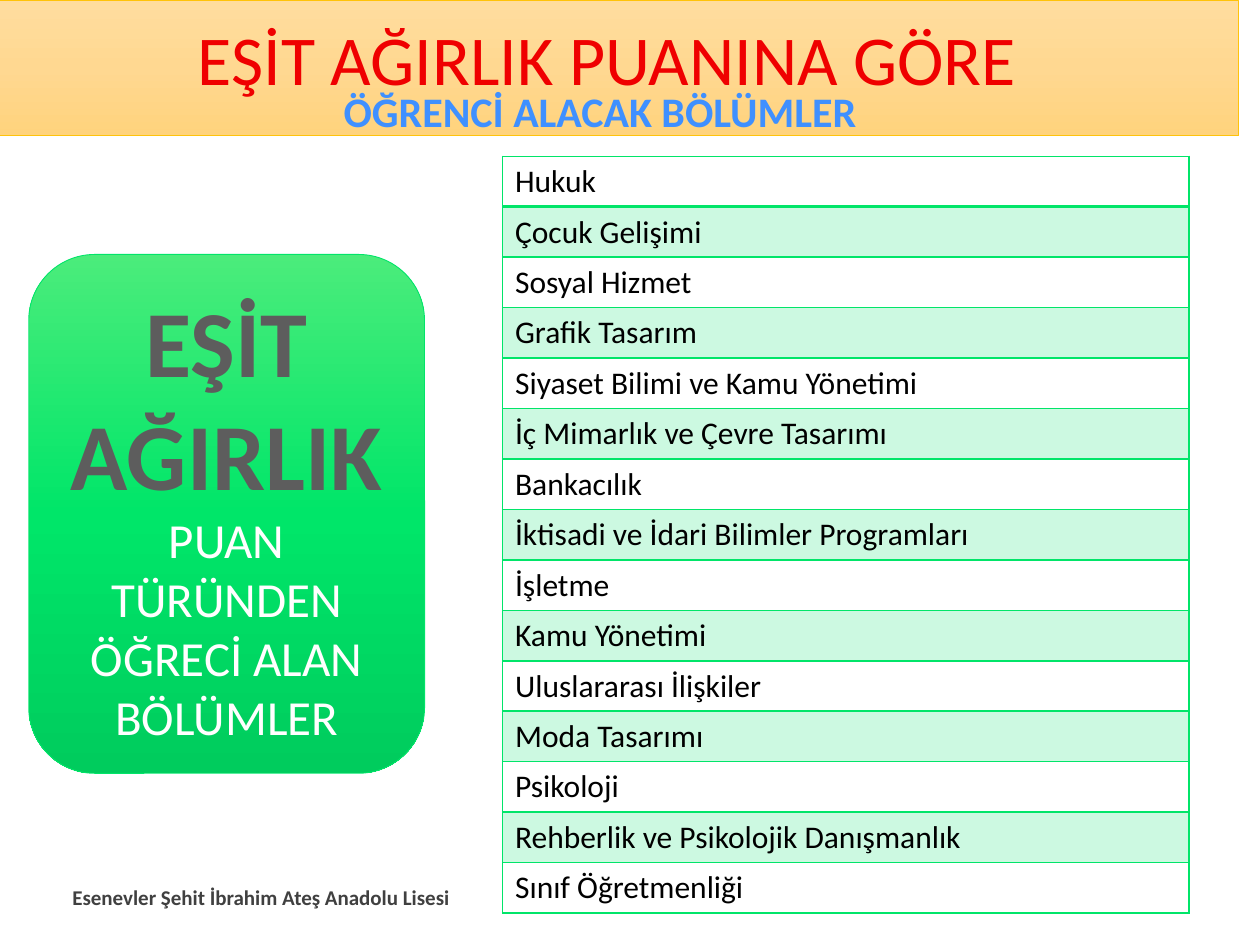
from dataclasses import dataclass

from lxml import etree
from pptx import Presentation
from pptx.dml.color import RGBColor
from pptx.enum.shapes import MSO_SHAPE
from pptx.enum.text import MSO_ANCHOR, MSO_AUTO_SIZE, PP_ALIGN
from pptx.oxml.ns import qn
from pptx.util import Cm, Pt

RECT = MSO_SHAPE.RECTANGLE
ROUND_RECT = MSO_SHAPE.ROUNDED_RECTANGLE
CENTER, LEFT = PP_ALIGN.CENTER, PP_ALIGN.LEFT
TOP, MIDDLE = MSO_ANCHOR.TOP, MSO_ANCHOR.MIDDLE
TITLE_ONLY = 5


@dataclass(frozen=True)
class Theme:
    font: str = "Calibri"
    title: str = "EF0000"
    subtitle: str = "3F90FF"
    heading: str = "5D5D5D"
    light: str = "FFFFFF"
    footer: str = "404040"
    body: str = "000000"
    green: str = "01E569"
    amber: str = "FFC30B"
    green_shades: tuple = ("4BEC7B", "00E669", "00CC5D")
    amber_shades: tuple = ("FFDD9F", "FFD891", "FFD37D")
    band_alpha: int = 20
    title_size: int = 40
    subtitle_size: int = 24
    heading_size: int = 54
    panel_size: int = 28
    table_size: int = 18
    footer_size: int = 12


THEME = Theme()

DEPARTMENTS = [
    "Hukuk",
    "Çocuk Gelişimi",
    "Sosyal Hizmet",
    "Grafik Tasarım",
    "Siyaset Bilimi ve Kamu Yönetimi",
    "İç Mimarlık ve Çevre Tasarımı",
    "Bankacılık",
    "İktisadi ve İdari Bilimler Programları",
    "İşletme",
    "Kamu Yönetimi",
    "Uluslararası İlişkiler",
    "Moda Tasarımı",
    "Psikoloji",
    "Rehberlik ve Psikolojik Danışmanlık",
    "Sınıf Öğretmenliği",
]


def format_run(r, size, color, bold=False):
    r.font.name = THEME.font
    r.font.size = Pt(size)
    r.font.bold = bold
    r.font.color.rgb = RGBColor.from_string(color)


def set_text(tf, text, size, color, bold=False, align=CENTER, anchor=TOP):
    tf.word_wrap = True
    tf.vertical_anchor = anchor
    tf.text = text
    p = tf.paragraphs[0]
    p.alignment = align
    format_run(p.runs[0], size, color, bold)


def add_label(slide, box, text, size, color, anchor=TOP):
    sp = slide.shapes.add_textbox(*map(Cm, box))
    set_text(sp.text_frame, text, size, color, bold=True, anchor=anchor)


def add_gradient_shape(slide, kind, box, shades, line):
    sp = slide.shapes.add_shape(kind, *map(Cm, box))
    sp.shadow.inherit = False
    sp.line.color.rgb = RGBColor.from_string(line)
    sp.line.width = Pt(0.5)
    # Evenly spaced stops, running from top to bottom
    sp.fill.gradient()
    sp.fill.gradient_angle = 270
    stops = sp.element.spPr.find(".//" + qn("a:gsLst"))
    stops.clear()
    for i, shade in enumerate(shades):
        pos = 100000 * i // (len(shades) - 1)
        gs = etree.SubElement(stops, qn("a:gs"), pos=str(pos))
        etree.SubElement(gs, qn("a:srgbClr"), val=shade)
    return sp


def add_title(slide, band):
    title = slide.shapes.title
    title.left, title.top, title.width, title.height = map(
        Cm, (-0.46, 0.18, 25.4, 3))
    title.text_frame.auto_size = MSO_AUTO_SIZE.NONE
    set_text(title.text_frame, "EŞİT AĞIRLIK PUANINA GÖRE",
             THEME.title_size, THEME.title)
    band.element.addnext(title.element)  # keep the title above its band


def add_panel(slide):
    sp = add_gradient_shape(slide, ROUND_RECT, (0.58, 5.13, 7.98, 10.46),
                            THEME.green_shades, THEME.green)
    tf = sp.text_frame
    set_text(tf, "EŞİT AĞIRLIK", THEME.heading_size, THEME.heading,
             bold=True, anchor=MIDDLE)
    r = tf.paragraphs[0].add_run()
    r.text = " PUAN TÜRÜNDEN ÖĞRECİ ALAN BÖLÜMLER"
    format_run(r, THEME.panel_size, THEME.light)


def set_borders(cell, widths):
    tc_pr = cell._tc.get_or_add_tcPr()
    for i, (side, width) in enumerate(zip("LRTB", widths)):
        ln = etree.Element(qn("a:ln" + side), w=str(Pt(width)))
        fill = etree.SubElement(ln, qn("a:solidFill"))
        etree.SubElement(fill, qn("a:srgbClr"), val=THEME.green)
        tc_pr.insert(i, ln)


def set_cell_fill(cell, banded):
    if not banded:
        cell.fill.background()
        return
    cell.fill.solid()
    cell.fill.fore_color.rgb = RGBColor.from_string(THEME.green)
    color = cell._tc.tcPr.find(".//" + qn("a:srgbClr"))
    etree.SubElement(color, qn("a:alpha"), val=str(THEME.band_alpha * 1000))


def add_department_table(slide):
    table = slide.shapes.add_table(
        len(DEPARTMENTS), 1, *map(Cm, (10.13, 3.15, 13.84, 15.24))).table
    table.first_row = False
    table.horz_banding = False
    for i, name in enumerate(DEPARTMENTS):
        cell = table.cell(i, 0)
        set_text(cell.text_frame, name, THEME.table_size, THEME.body,
                 align=LEFT)
        set_cell_fill(cell, banded=i % 2 == 1)
        # A heavier rule separates the first row
        set_borders(cell, (1, 1, 2 if i == 1 else 1, 2 if i == 0 else 1))


def main():
    prs = Presentation()
    prs.slide_width, prs.slide_height = Cm(25.4), Cm(19.05)
    slide = prs.slides.add_slide(prs.slide_layouts[TITLE_ONLY])

    # Left panel
    add_panel(slide)

    # Heading band with title and subtitle
    band = add_gradient_shape(slide, RECT, (-0.43, 0, 25.4, 2.74),
                              THEME.amber_shades, THEME.amber)
    add_title(slide, band)
    add_label(slide, (0.69, 1.6, 22.81, 1.27), "ÖĞRENCİ ALACAK BÖLÜMLER",
              THEME.subtitle_size, THEME.subtitle)

    # School name
    add_label(slide, (0.97, 17.58, 8.59, 1.02),
              "Esenevler Şehit İbrahim Ateş Anadolu Lisesi",
              THEME.footer_size, THEME.footer, anchor=MIDDLE)

    # Departments
    add_department_table(slide)

    prs.save("out.pptx")


if __name__ == "__main__":
    main()
